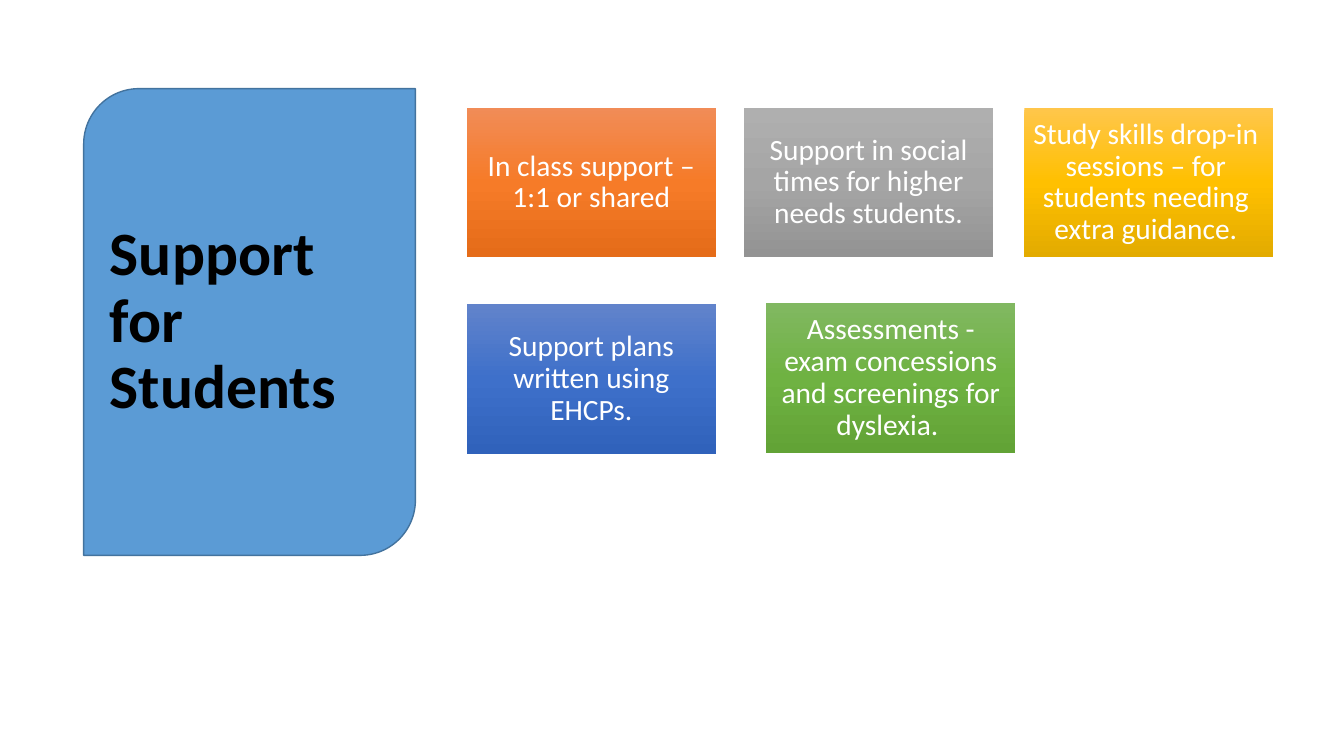
from copy import deepcopy

from pptx import Presentation
from pptx.dml.color import RGBColor
from pptx.enum.shapes import MSO_SHAPE as Preset
from pptx.enum.text import MSO_ANCHOR as Anchor, PP_ALIGN as Align
from pptx.oxml.ns import qn
from pptx.util import Inches, Pt

FONT = "Calibri"
BLACK = RGBColor(0x00, 0x00, 0x00)
WHITE = RGBColor(0xFF, 0xFF, 0xFF)
PANEL_BLUE = RGBColor(0x5B, 0x9B, 0xD5)
PANEL_EDGE = RGBColor(0x43, 0x73, 0x9E)
ORANGES = RGBColor(0xF1, 0x8C, 0x57), RGBColor(0xF6, 0x7B, 0x28), RGBColor(0xE5, 0x6C, 0x19)
GREYS = RGBColor(0xAF, 0xAF, 0xAF), RGBColor(0xA5, 0xA5, 0xA5), RGBColor(0x93, 0x93, 0x93)
GOLDS = RGBColor(0xFF, 0xC6, 0x4B), RGBColor(0xFF, 0xC0, 0x00), RGBColor(0xE3, 0xAB, 0x00)
BLUES = RGBColor(0x61, 0x83, 0xCB), RGBColor(0x3E, 0x70, 0xCA), RGBColor(0x30, 0x62, 0xBB)
GREENS = RGBColor(0x81, 0xB8, 0x61), RGBColor(0x6F, 0xB2, 0x42), RGBColor(0x62, 0xA3, 0x36)

CARD_WIDTH, CARD_HEIGHT = 2.47, 1.48
CARD_INSET = 0.09
CARDS = [
    (0, 0, ORANGES, 0, "In class support – 1:1 or shared"),
    (2.75, 0, GREYS, 0, "Support in social times for higher needs students."),
    (5.53, 0, GOLDS, 0.03, "Study skills drop-in sessions – for students needing extra guidance."),
    (0, 1.95, BLUES, 0, "Support plans written using EHCPs."),
    (2.97, 1.94, GREENS, 0, "Assessments - exam concessions and screenings for dyslexia. "),
]


def write_text(shape, text, size, color, align, bold=False):
    """Fill a shape with one wrapped, vertically centred paragraph."""
    frame = shape.text_frame
    frame.word_wrap = True
    frame.vertical_anchor = Anchor.MIDDLE
    frame.text = text
    paragraph = frame.paragraphs[0]
    paragraph.alignment = align
    paragraph.line_spacing = 0.9
    paragraph.font.name = FONT
    paragraph.font.size = Pt(size)
    paragraph.font.bold = bold
    paragraph.font.color.rgb = color


def fill_gradient(shape, colors):
    """Give a shape a three-stop gradient from top to bottom."""
    shape.fill.gradient()
    shape.fill.gradient_angle = 270
    stop_list = shape.fill._xPr.find(qn("a:gradFill")).find(qn("a:gsLst"))
    stop_list.append(deepcopy(stop_list[-1]))
    for stop, position, color in zip(shape.fill.gradient_stops, (0, 0.5, 1), colors):
        stop.position = position
        stop.color.rgb = color


def add_title_panel(slide, left, top, width, height):
    """Draw the blue panel and set the slide title inside it."""
    panel = slide.shapes.add_shape(
        Preset.ROUND_2_DIAG_RECTANGLE, Inches(left), Inches(top), Inches(width), Inches(height))
    panel.shadow.inherit = False
    panel.fill.solid()
    panel.fill.fore_color.rgb = PANEL_BLUE
    panel.line.color.rgb = PANEL_EDGE
    panel.line.width = Pt(1)

    title = slide.shapes.title
    corner = 0.16
    title.left, title.top = Inches(left + corner), Inches(top + corner)
    title.width, title.height = Inches(width - 2 * corner), Inches(height - 2 * corner)
    write_text(title, "Support for Students", 44, BLACK, Align.LEFT, bold=True)
    panel._element.addnext(title._element)


def add_card(slide, left, top, colors, text_shift, text):
    """Draw one support card, its text moved left by text_shift."""
    card = slide.shapes.add_shape(
        Preset.RECTANGLE, Inches(left), Inches(top), Inches(CARD_WIDTH), Inches(CARD_HEIGHT))
    card.shadow.inherit = False
    card.line.fill.background()
    fill_gradient(card, colors)
    frame = card.text_frame
    frame.margin_top = frame.margin_bottom = Inches(CARD_INSET)
    frame.margin_left = Inches(CARD_INSET - text_shift)
    frame.margin_right = Inches(CARD_INSET + text_shift)
    write_text(card, text, 21, WHITE, Align.CENTER)


def add_support_cards(slide, left, top):
    """Place all support cards relative to the top left corner."""
    for across, down, colors, text_shift, text in CARDS:
        add_card(slide, left + across, top + down, colors, text_shift, text)


def main():
    """Build and save the slide."""
    presentation = Presentation()
    presentation.slide_width, presentation.slide_height = Inches(13.33), Inches(7.5)
    slide = presentation.slides.add_slide(presentation.slide_layouts.get_by_name("Title Only"))
    add_title_panel(slide, 0.83, 0.88, 3.29, 4.63)
    add_support_cards(slide, 4.63, 1.07)
    presentation.save("out.pptx")


if __name__ == "__main__":
    main()
